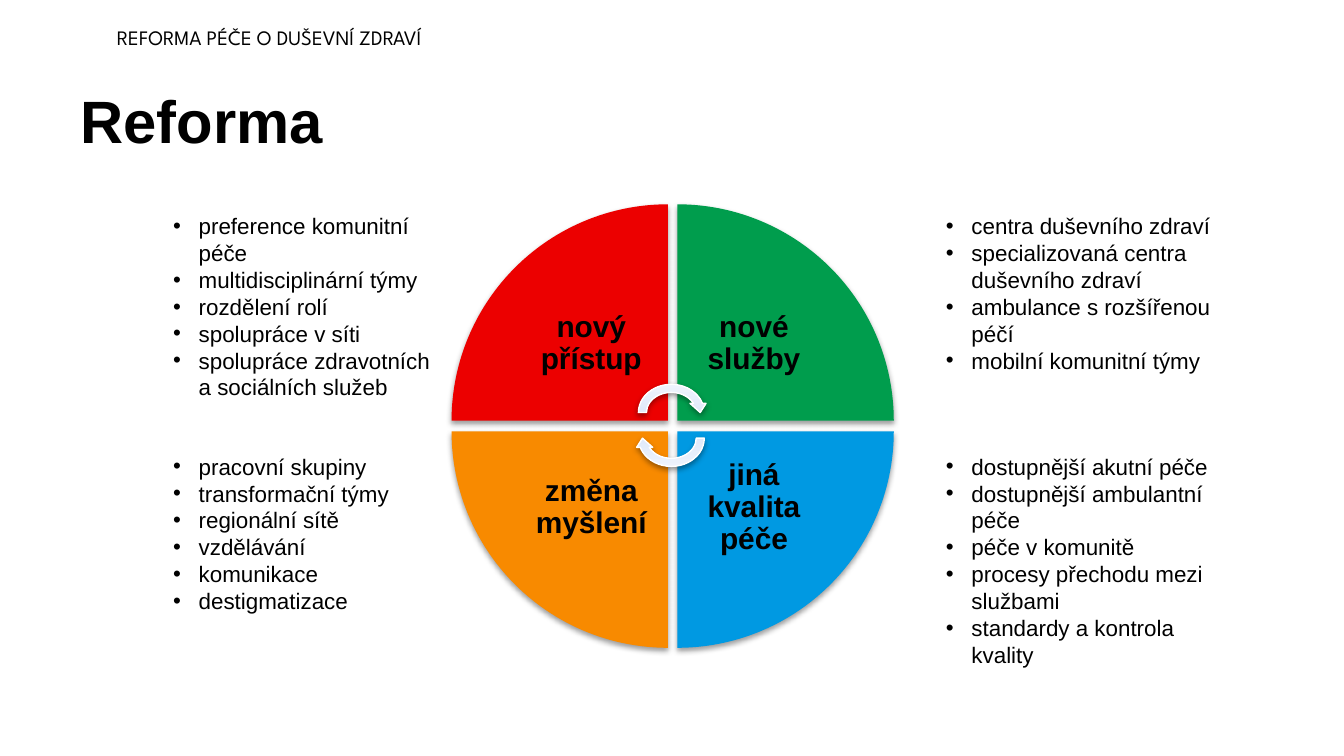
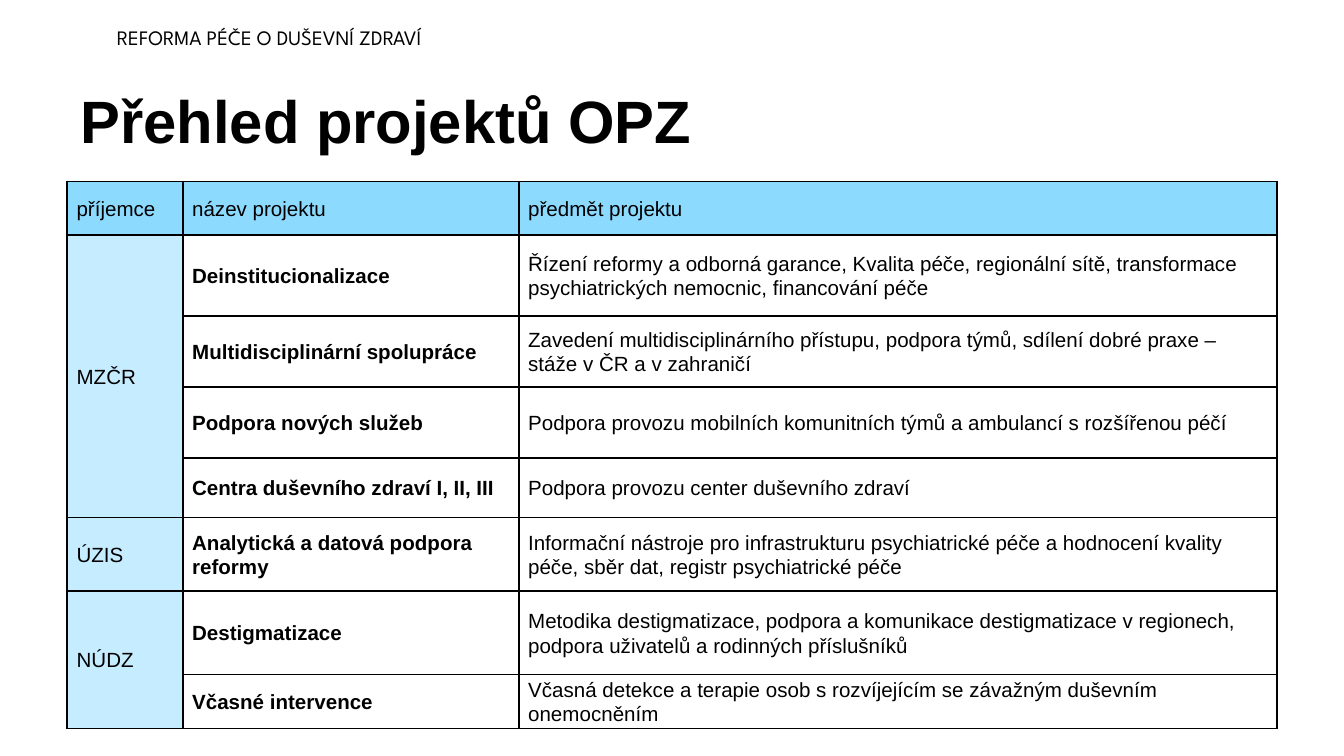
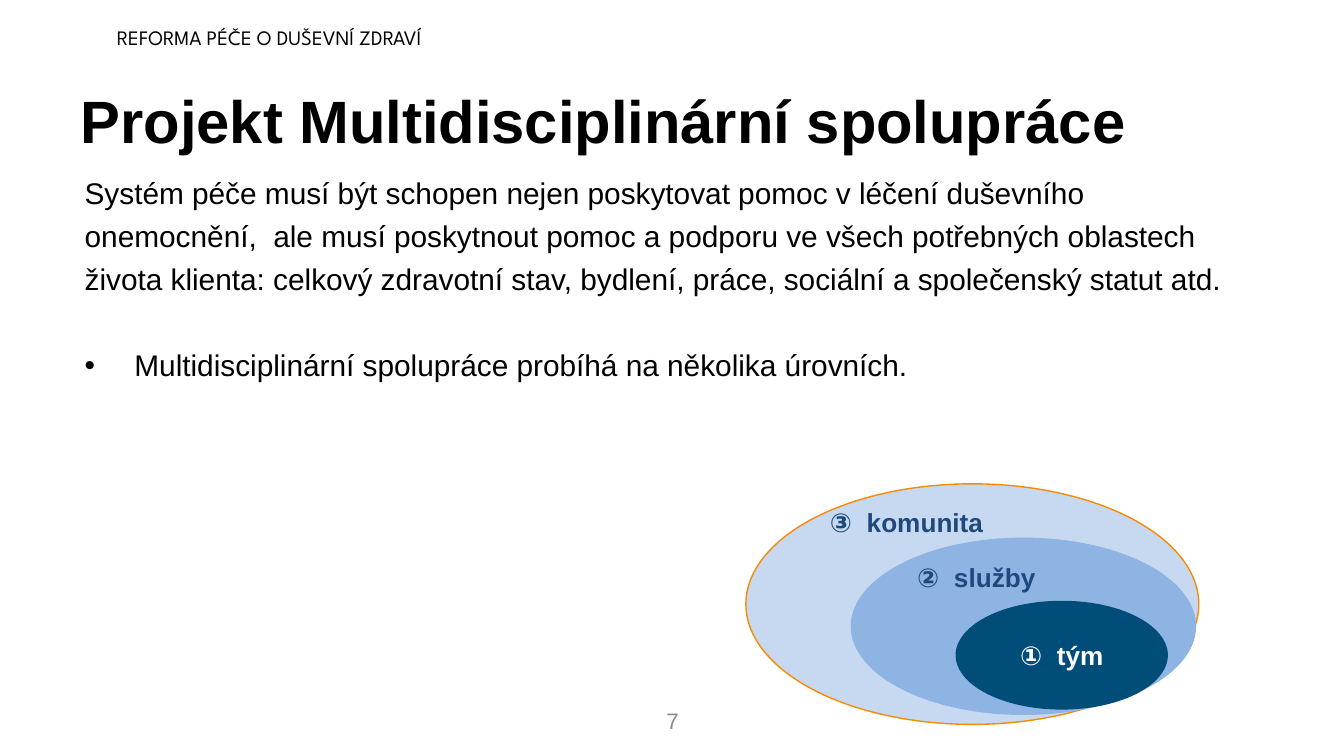
from dataclasses import dataclass

from lxml.etree import SubElement
from pptx import Presentation
from pptx.dml.color import RGBColor
from pptx.enum.shapes import MSO_SHAPE
from pptx.enum.text import MSO_ANCHOR, MSO_AUTO_SIZE, PP_ALIGN
from pptx.oxml import parse_xml
from pptx.oxml.ns import nsdecls, qn
from pptx.util import Inches, Pt


@dataclass(frozen=True)
class Theme:
    """Fonts, type sizes in points and colours of the deck."""
    font: str = "Arial"
    header_font: str = "League Spartan"
    title_size: int = 32
    body_size: int = 16
    label_size: int = 14
    list_size: int = 12
    small_size: int = 11
    black: str = "000000"
    white: str = "FFFFFF"
    gray: str = "8C8C8C"
    red: str = "EC0000"
    green: str = "009D4D"
    blue: str = "0099E2"
    orange: str = "F88A00"
    arrow_start: str = "CDDCF6"
    arrow_end: str = "F0F5FD"
    table_head: str = "8DDAFF"
    table_side: str = "C6EDFF"
    community: str = "C6D9F1"
    services: str = "8EB4E3"
    team: str = "004D7A"
    navy: str = "1F497D"


THEME = Theme()
TITLE_ONLY, TITLE_AND_BODY = 5, 1

LISTS = [
    (1.19, 1.53, 1.92, [
        "preference komunitní péče", "multidisciplinární týmy", "rozdělení rolí",
        "spolupráce v síti", "spolupráce zdravotních a sociálních služeb"]),
    (6.94, 1.53, 1.72, [
        "centra duševního zdraví", "specializovaná centra duševního zdraví",
        "ambulance s rozšířenou péčí", "mobilní komunitní týmy"]),
    (1.19, 3.32, 1.51, [
        "pracovní skupiny", "transformační týmy", "regionální sítě",
        "vzdělávání", "komunikace", "destigmatizace"]),
    (6.94, 3.32, 1.92, [
        "dostupnější akutní péče", "dostupnější ambulantní péče", "péče v komunitě",
        "procesy přechodu mezi službami", "standardy a kontrola kvality"]),
]

QUADRANTS = [
    ("nový přístup", THEME.red, 0, 0, 0),
    ("nové služby", THEME.green, 1, 0, 90),
    ("jiná kvalita péče", THEME.blue, 1, 1, 180),
    ("změna myšlení", THEME.orange, 0, 1, 270),
]

COLUMN_WIDTHS = [0.86, 2.5, 5.64]
ROW_HEIGHTS = [0.4, 0.6, 0.53, 0.53, 0.44, 0.55, 0.62, 0.4]
RECIPIENT_SPANS = [(1, 4), (6, 7)]
PROJECTS = [
    ("příjemce", "název projektu", "předmět projektu"),
    ("MZČR", "Deinstitucionalizace",
     "Řízení reformy a odborná garance, Kvalita péče, regionální sítě, "
     "transformace psychiatrických nemocnic, financování péče"),
    ("", "Multidisciplinární spolupráce",
     "Zavedení multidisciplinárního přístupu, podpora týmů, sdílení dobré praxe – "
     "stáže v ČR a v zahraničí"),
    ("", "Podpora nových služeb",
     "Podpora provozu mobilních komunitních týmů a ambulancí s rozšířenou péčí"),
    ("", "Centra duševního zdraví I, II, III", "Podpora provozu center duševního zdraví"),
    ("ÚZIS", "Analytická a datová podpora reformy",
     "Informační nástroje pro infrastrukturu psychiatrické péče a hodnocení kvality péče, "
     "sběr dat, registr psychiatrické péče"),
    ("NÚDZ", "Destigmatizace",
     "Metodika destigmatizace, podpora a komunikace destigmatizace v regionech, "
     "podpora uživatelů a rodinných příslušníků"),
    ("", "Včasné intervence",
     "Včasná detekce a terapie osob s rozvíjejícím se závažným duševním onemocněním"),
]


def inches(*lengths):
    """Convert several lengths to Inches."""
    return [Inches(length) for length in lengths]


def color_of(code):
    """Return the colour object for a hex code."""
    return RGBColor.from_string(code)


def add_bullet(paragraph, indent, number=None):
    """Give a paragraph a hanging dot, or a circled number if one is given."""
    properties = paragraph._p.get_or_add_pPr()
    properties.set("marL", str(Inches(indent)))
    properties.set("indent", str(-Inches(indent)))
    if number:
        SubElement(properties, qn("a:buAutoNum"), type="circleNumDbPlain", startAt=str(number))
    else:
        SubElement(properties, qn("a:buFont"), typeface=THEME.font)
        SubElement(properties, qn("a:buChar"), char="•")


def remove_bullet(paragraph):
    """Clear the inherited bullet and indent of a paragraph."""
    properties = paragraph._p.get_or_add_pPr()
    properties.set("marL", "0")
    properties.set("indent", "0")
    SubElement(properties, qn("a:buNone"))


def write_text(frame, lines, size=THEME.body_size, color=THEME.black, bold=False,
               font=THEME.font, align=PP_ALIGN.LEFT, line_spacing=1.0,
               space_before=0, space_after=0, indent=0, number=None):
    """Add formatted paragraphs to a text frame, filling its empty first one."""
    for line in lines:
        first = frame.paragraphs[0]
        paragraph = frame.add_paragraph() if first.runs else first
        if indent:
            add_bullet(paragraph, indent, number)
        else:
            remove_bullet(paragraph)
        paragraph.alignment = align
        paragraph.line_spacing = line_spacing
        paragraph.space_before = Pt(space_before)
        paragraph.space_after = Pt(space_after)
        run = paragraph.add_run()
        run.text = line
        run.font.name = font
        run.font.size = Pt(size)
        run.font.bold = bold
        run.font.color.rgb = color_of(color)


def add_label(slide, box, lines, anchor=MSO_ANCHOR.TOP, inset=None, wrap=True, **text_format):
    """Add a text box with formatted lines."""
    shape = slide.shapes.add_textbox(*inches(*box))
    frame = shape.text_frame
    frame.word_wrap = wrap
    frame.vertical_anchor = anchor
    if inset is not None:
        frame.margin_left = frame.margin_right = Inches(inset)
        frame.margin_top = frame.margin_bottom = Inches(inset)
    write_text(frame, lines, **text_format)
    return shape


def add_figure(slide, kind, box, fill=None, line=None, rotation=0, shadow=False):
    """Add a preset shape with the given fill, outline, rotation and shadow."""
    shape = slide.shapes.add_shape(kind, *inches(*box))
    shape.rotation = rotation
    shape.shadow.inherit = False
    if shadow:
        effects = shape.element.spPr.find(qn("a:effectLst"))
        effects.append(parse_xml(
            f'<a:outerShdw {nsdecls("a")} blurRad="{Pt(3.1)}" dist="{Pt(1.6)}" dir="5400000" '
            f'rotWithShape="0"><a:srgbClr val="{THEME.black}"><a:alpha val="38000"/>'
            '</a:srgbClr></a:outerShdw>'))
    if fill:
        shape.fill.solid()
        shape.fill.fore_color.rgb = color_of(fill)
    if line:
        shape.line.color.rgb = color_of(line)
        shape.line.width = Pt(0.75)
    else:
        shape.line.fill.background()
    return shape


def add_titled_slide(presentation, layout, title, width=7.02):
    """Add a slide and fill its title placeholder."""
    slide = presentation.slides.add_slide(presentation.slide_layouts[layout])
    shape = slide.shapes.title
    shape.left, shape.top, shape.width, shape.height = inches(0.5, 0.55, width, 0.68)
    shape.text_frame.vertical_anchor = MSO_ANCHOR.MIDDLE
    shape.text_frame.auto_size = MSO_AUTO_SIZE.NONE
    write_text(shape.text_frame, [title], size=THEME.title_size, bold=True)
    return slide


def add_master_header(presentation, slide):
    """Place the running header on the slide master."""
    header = add_label(slide, (0.87, 0.18, 2.78, 0.19), ["REFORMA PÉČE O DUŠEVNÍ ZDRAVÍ"],
                       anchor=MSO_ANCHOR.MIDDLE, inset=0, wrap=False,
                       size=THEME.small_size, font=THEME.header_font)
    presentation.slide_master.element.cSld.spTree.append(header.element)


def add_wheel(slide, left, top, wedge=1.61, step_x=1.68, step_y=1.69, label=1.14):
    """Draw four labelled wedges and the two arrows turning at their centre."""
    for text, color, column, row, rotation in QUADRANTS:
        x, y = left + column * step_x, top + row * step_y
        add_figure(slide, MSO_SHAPE.PIE_WEDGE, (x, y, wedge, wedge), color,
                   rotation=rotation, shadow=True)
        label_x = x + (1 - column) * (wedge - label)
        label_y = y + (1 - row) * (wedge - label)
        add_label(slide, (label_x, label_y, label, label), [text], anchor=MSO_ANCHOR.MIDDLE,
                  inset=0.12, bold=True, align=PP_ALIGN.CENTER, line_spacing=0.9)
    for offset, rotation in ((1.31, 0), (1.5, 180)):
        arrow = add_figure(slide, MSO_SHAPE.CIRCULAR_ARROW, (left + 1.36, top + offset, 0.55, 0.48),
                           line=THEME.white, rotation=rotation, shadow=True)
        arrow.fill.gradient()
        arrow.fill.gradient_angle = 90
        for stop, color in zip(arrow.fill.gradient_stops, (THEME.arrow_start, THEME.arrow_end)):
            stop.color.rgb = color_of(color)


def format_cell(cell, text, fill, bold):
    """Write one table cell with its fill and black borders."""
    cell.vertical_anchor = MSO_ANCHOR.MIDDLE
    cell.margin_left = cell.margin_right = Inches(0.07)
    cell.margin_top = cell.margin_bottom = 0
    if fill:
        cell.fill.solid()
        cell.fill.fore_color.rgb = color_of(fill)
    else:
        cell.fill.background()
    properties = cell._tc.get_or_add_tcPr()
    for index, side in enumerate("LRTB"):
        properties.insert(index, parse_xml(
            f'<a:ln{side} {nsdecls("a")} w="{Pt(1)}"><a:solidFill>'
            f'<a:srgbClr val="{THEME.black}"/></a:solidFill></a:ln{side}>'))
    if text:
        write_text(cell.text_frame, [text], size=THEME.small_size, bold=bold,
                   line_spacing=1.07, space_after=8)


def add_project_table(slide, left, top):
    """Add the table of projects with recipients merged down the first column."""
    box = (left, top, sum(COLUMN_WIDTHS), sum(ROW_HEIGHTS))
    table = slide.shapes.add_table(len(PROJECTS), len(COLUMN_WIDTHS), *inches(*box)).table
    table.first_row = table.horz_banding = False
    for column, width in zip(table.columns, COLUMN_WIDTHS):
        column.width = Inches(width)
    for row, height in zip(table.rows, ROW_HEIGHTS):
        row.height = Inches(height)
    for row, texts in enumerate(PROJECTS):
        for column, text in enumerate(texts):
            side_fill = THEME.table_side if column == 0 else None
            fill = THEME.table_head if row == 0 else side_fill
            format_cell(table.cell(row, column), text, fill, bold=row > 0 and column == 1)
    for first, last in RECIPIENT_SPANS:
        table.cell(first, 0).merge(table.cell(last, 0))


def add_levels(slide, left, top):
    """Draw the nested ellipses of community, services and team."""
    label_format = dict(size=THEME.label_size, bold=True, align=PP_ALIGN.CENTER, indent=0.22)
    add_figure(slide, MSO_SHAPE.OVAL, (left, top, 3.37, 1.79), THEME.community, THEME.orange)
    add_figure(slide, MSO_SHAPE.OVAL, (left + 0.78, top + 0.4, 2.57, 1.32), THEME.services)
    team = add_figure(slide, MSO_SHAPE.OVAL, (left + 1.56, top + 0.87, 1.58, 0.81), THEME.team)
    team.text_frame.vertical_anchor = MSO_ANCHOR.MIDDLE
    write_text(team.text_frame, [" tým"], color=THEME.white, number=1, **label_format)
    add_label(slide, (left + 0.9, top + 0.53, 1.63, 0.29), [" služby"],
              color=THEME.navy, number=2, **label_format)
    add_label(slide, (left + 0.22, top + 0.12, 1.95, 0.29), [" komunita"],
              color=THEME.navy, number=3, **label_format)


def add_body(slide, box):
    """Fill the body placeholder with the introduction and its bullet."""
    body = slide.placeholders[1]
    body.left, body.top, body.width, body.height = inches(*box)
    frame = body.text_frame
    frame.auto_size = MSO_AUTO_SIZE.NONE
    write_text(frame, [
        "Systém péče musí být schopen nejen poskytovat pomoc v léčení duševního onemocnění,  "
        "ale musí poskytnout pomoc a podporu ve všech potřebných oblastech života klienta: "
        "celkový zdravotní stav, bydlení, práce, sociální a společenský statut atd."],
        line_spacing=1.2)
    write_text(frame, ["Multidisciplinární spolupráce probíhá na několika úrovních."],
               line_spacing=1.2, space_before=23, indent=0.37)


def build_reform_slide(presentation):
    """Build the slide with the wheel and its four lists."""
    slide = add_titled_slide(presentation, TITLE_ONLY, "Reforma")
    add_master_header(presentation, slide)
    add_wheel(slide, 3.36, 1.52)
    for left, top, height, items in LISTS:
        add_label(slide, (left, top, 2.17, height), items, size=THEME.list_size, indent=0.19)


def build_projects_slide(presentation):
    """Build the slide with the project table."""
    slide = add_titled_slide(presentation, TITLE_ONLY, "Přehled projektů OPZ")
    add_project_table(slide, 0.5, 1.35)


def build_cooperation_slide(presentation):
    """Build the slide on levels of multidisciplinary cooperation."""
    slide = add_titled_slide(presentation, TITLE_AND_BODY,
                             "Projekt Multidisciplinární spolupráce", width=8.74)
    add_body(slide, (0.53, 1.2, 8.68, 1.75))
    add_label(slide, (3.42, 5.21, 3.17, 0.3), ["7"], anchor=MSO_ANCHOR.MIDDLE,
              size=THEME.list_size, color=THEME.gray, align=PP_ALIGN.CENTER)
    add_levels(slide, 5.55, 3.6)


def main():
    """Build and save the presentation."""
    presentation = Presentation()
    presentation.slide_width = Inches(10)
    presentation.slide_height = Inches(10 * 9 / 16)
    build_reform_slide(presentation)
    build_projects_slide(presentation)
    build_cooperation_slide(presentation)
    presentation.save("out.pptx")


if __name__ == "__main__":
    main()
